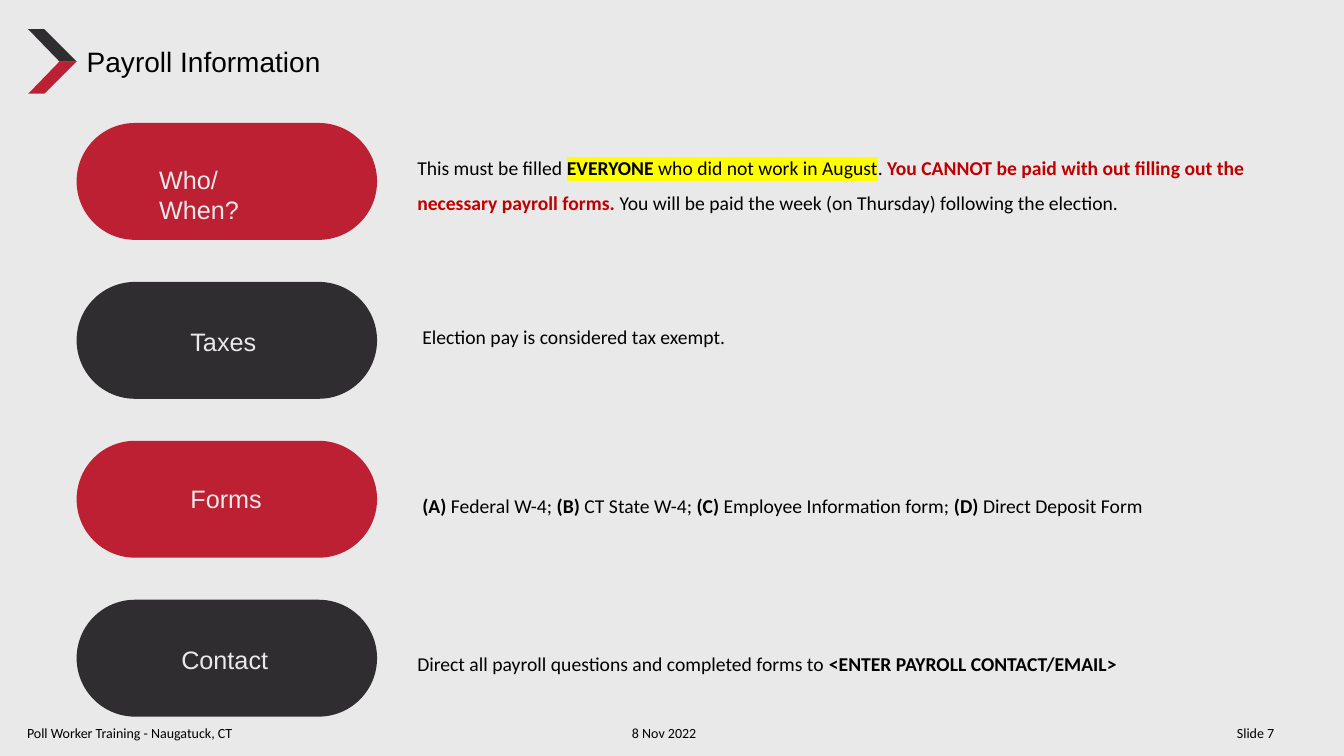
from lxml.etree import SubElement
from pptx import Presentation
from pptx.dml.color import RGBColor
from pptx.enum.shapes import MSO_SHAPE
from pptx.enum.text import MSO_ANCHOR, MSO_AUTO_SIZE, PP_ALIGN
from pptx.oxml.ns import qn
from pptx.util import Inches, Pt

RED = RGBColor(0xBE, 0x20, 0x33)
DARK = RGBColor(0x30, 0x2D, 0x31)
PALE = RGBColor(0xE9, 0xE9, 0xE9)
BLACK = RGBColor(0, 0, 0)
ALERT = RGBColor(0xC0, 0, 0)
YELLOW = RGBColor(0xFF, 0xFF, 0)


def cell(count):
    return Inches(count / 12)


def write(frame, parts, font="Calibri", size=14, color=BLACK, space=None, tabs=()):
    frame.word_wrap = True
    frame.auto_size = MSO_AUTO_SIZE.SHAPE_TO_FIT_TEXT
    frame.vertical_anchor = MSO_ANCHOR.TOP
    para = frame.paragraphs[0]
    para.alignment = PP_ALIGN.LEFT
    if space:
        para.line_spacing = space
    if tabs:
        stops = SubElement(para._p.get_or_add_pPr(), qn("a:tabLst"))
        for stop in tabs:
            SubElement(stops, qn("a:tab"), pos=str(cell(stop)), algn="l")
    for part in parts:
        text, style = (part, {}) if isinstance(part, str) else part
        run = para.add_run()
        run.text = text
        run.font.size = Pt(size)
        run.font.bold = style.get("bold", False)
        run.font.color.rgb = style.get("color", color)
        if "mark" in style:
            mark = SubElement(run._r.get_or_add_rPr(), qn("a:highlight"))
            SubElement(mark, qn("a:srgbClr"), val=str(style["mark"]))
        run.font.name = font


class Page:
    font = "Arial"

    def __init__(self, deck):
        self.slide = deck.slides.add_slide(deck.slide_layouts[5])
        self.shapes = self.slide.shapes
        fill = self.slide.background.fill
        fill.solid()
        fill.fore_color.rgb = PALE

    def paint(self, shape, color):
        shape.shadow.inherit = False
        shape.fill.solid()
        shape.fill.fore_color.rgb = color
        shape.line.fill.background()

    def title(self, text, *box):
        shape = self.shapes.title
        shape.left, shape.top, shape.width, shape.height = map(cell, box)
        write(shape.text_frame, [text], font=self.font, size=20)

    def text(self, parts, *box, **style):
        shape = self.shapes.add_textbox(*map(cell, box))
        write(shape.text_frame, parts, **style)

    def label(self, text, *box):
        self.text([text], *box, font=self.font, size=18, color=PALE)

    def pill(self, color, *box):
        shape = self.shapes.add_shape(MSO_SHAPE.ROUNDED_RECTANGLE, *map(cell, box))
        shape.adjustments[0] = 0.5
        self.paint(shape, color)

    def arm(self, color, edge, tip):
        start, *rest = [(cell(x), cell(y)) for x, y in
                        ((3.36, edge), (5.28, edge), (9.12, tip), (7.08, tip))]
        form = self.shapes.build_freeform(*start)
        form.add_line_segments(rest, close=True)
        self.paint(form.convert_to_shape(), color)


def main():
    deck = Presentation()
    deck.slide_width, deck.slide_height = Inches(13.33), Inches(7.5)
    page = Page(deck)
    bold = {"bold": True}

    page.arm(DARK, 3.48, 7.32)
    page.arm(RED, 11.16, 7.32)
    page.title("Payroll Information", 9.12, 4.68, 49.2, 5.28)

    rows = [
        ("Who/When?", (17.76, 18.96, 17.64, 4.8), (48.48, 16.56, 105.84, 9.72), [
            "This must be filled ",
            ("EVERYONE", {"bold": True, "mark": YELLOW}),
            (" who did not work in August", {"mark": YELLOW}),
            ". ",
            ("You CANNOT be paid with out filling out the necessary payroll forms.",
             {"bold": True, "color": ALERT}),
            " You will be paid the week (on Thursday) following the election."]),
        ("Taxes", (21.48, 38.28, 19.44, 4.8), (49.08, 36.72, 106.68, 5.4),
         ["Election pay is considered tax exempt."]),
        ("Forms", (21.48, 57, 24.12, 4.8), (49.08, 56.76, 104.64, 5.4), [
            ("(A)", bold), " Federal W-4; ",
            ("(B)", bold), " CT State W-4; ",
            ("(C)", bold), " Employee Information form; ",
            ("(D) ", bold), "Direct Deposit Form"]),
        ("Contact", (20.4, 76.08, 20.04, 4.8), (48.48, 75.6, 105.84, 5.4), [
            "Direct all payroll questions and completed forms to ",
            ("<ENTER PAYROLL CONTACT/EMAIL>", bold)]),
    ]
    for row, (name, spot, area, parts) in enumerate(rows):
        page.pill((RED, DARK)[row % 2], 9.12, 14.64 + 18.92 * row, 35.76, 13.92)
        page.label(name, *spot)
        page.text(parts, *area, space=1.5)

    page.text(["Poll Worker Training - Naugatuck, CT\t8 Nov 2022\tSlide 7"],
              2.04, 85.68, 153.6, 3.24, size=10, tabs=(72, 144))
    deck.save("out.pptx")


if __name__ == "__main__":
    main()
